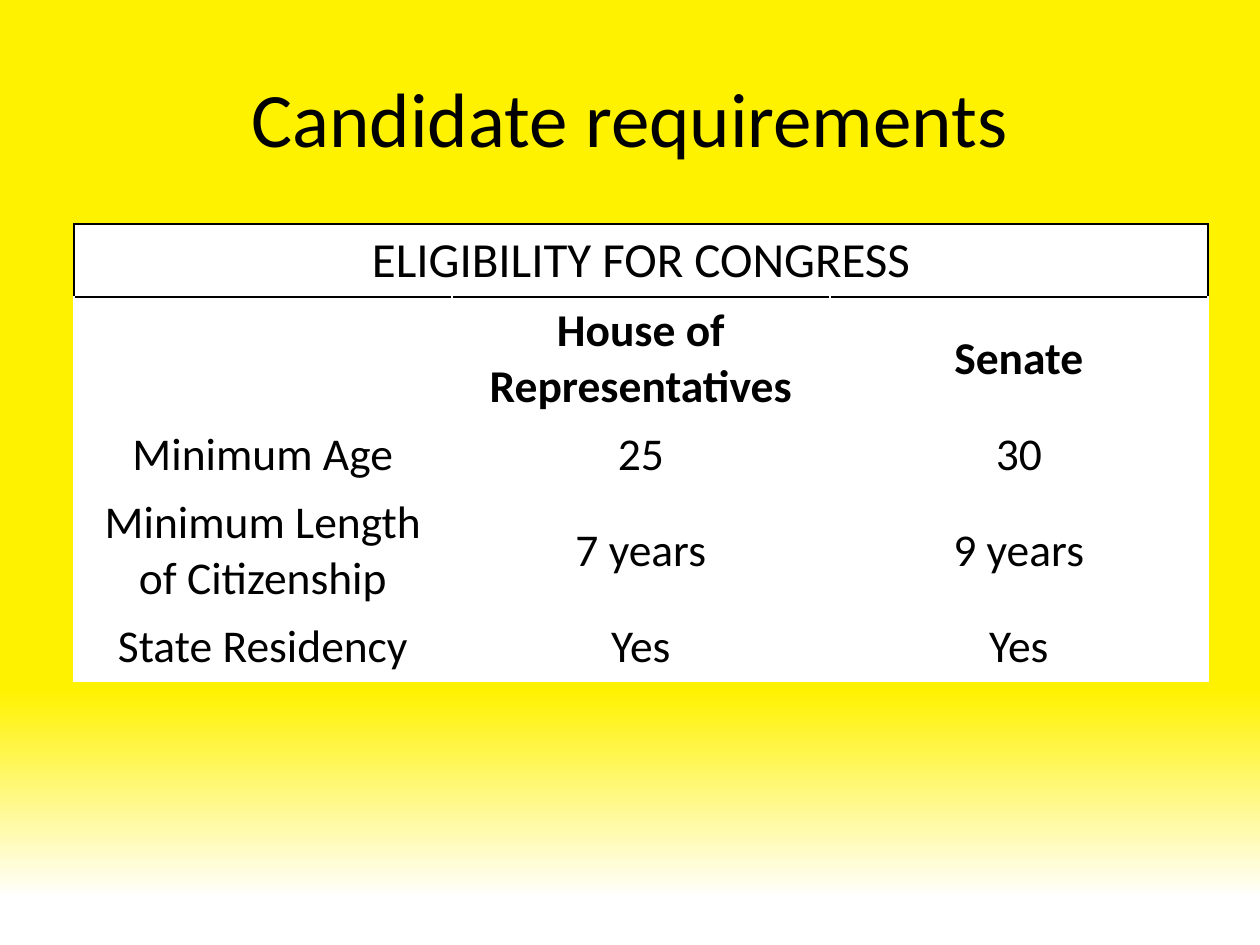
"""Build the slide on candidate requirements for Congress."""
from lxml.etree import SubElement
from pptx import Presentation
from pptx.dml.color import RGBColor
from pptx.enum.text import MSO_ANCHOR as Anchor, PP_ALIGN as Align
from pptx.oxml.ns import qn
from pptx.util import Pt

SCALE = 914400 // 126
COLORS = {"yellow": "FFF200", "white": "FFFFFF", "black": "000000"}
FONT = "Calibri"
TITLE = "Candidate requirements"
TITLE_BOX = (63, 38, 1134, 157)
BACKGROUND_STOPS = [(0.73, "yellow"), (0.95, "white")]
ROWS = [
    ("ELIGIBILITY FOR CONGRESS", "", ""),
    ("", "House of Representatives", "Senate"),
    ("Minimum Age", "25", "30"),
    ("Minimum Length of Citizenship", "7 years", "9 years"),
    ("State Residency", "Yes", "Yes"),
]
ROW_HEIGHTS = [73, 124, 68, 124, 68]
COLUMN_WIDTH = 378
TABLE_LEFT, TABLE_TOP = 74, 224
BORDERS = {0: "LRTB", 1: "T"}


def px(length):
    return length * SCALE


def color(name):
    return RGBColor.from_string(COLORS[name])


def write(text_frame, text, size, bold=False):
    text_frame.text = text
    paragraph = text_frame.paragraphs[0]
    paragraph.alignment = Align.CENTER
    paragraph.font.size = Pt(size)
    for run in paragraph.runs:
        run.font.name = FONT
        run.font.size = Pt(size)
        run.font.bold = bold
        run.font.color.rgb = color("black")


def add_borders(cell, sides):
    properties = cell._tc.get_or_add_tcPr()
    for index, side in enumerate(sides):
        line = SubElement(properties, qn(f"a:ln{side}"), w=str(Pt(1)))
        fill = SubElement(line, qn("a:solidFill"))
        SubElement(fill, qn("a:srgbClr"), val=COLORS["black"])
        properties.insert(index, line)


def paint_background(slide):
    fill = slide.background.fill
    fill.gradient()
    fill.gradient_angle = 270
    for stop, (position, name) in zip(fill.gradient_stops, BACKGROUND_STOPS):
        stop.position = position
        stop.color.rgb = color(name)


def add_title(slide):
    text_frame = slide.shapes.add_textbox(*map(px, TITLE_BOX)).text_frame
    text_frame.word_wrap = True
    text_frame.vertical_anchor = Anchor.MIDDLE
    write(text_frame, TITLE, 44)


def add_requirements(slide):
    columns = len(ROWS[0])
    box = (TABLE_LEFT, TABLE_TOP, columns * COLUMN_WIDTH, sum(ROW_HEIGHTS))
    table = slide.shapes.add_table(len(ROWS), columns, *map(px, box)).table
    table.first_row = table.horz_banding = False
    for column in table.columns:
        column.width = px(COLUMN_WIDTH)
    for r, (texts, height) in enumerate(zip(ROWS, ROW_HEIGHTS)):
        table.rows[r].height = px(height)
        for c, text in enumerate(texts):
            cell = table.cell(r, c)
            cell.vertical_anchor = Anchor.MIDDLE
            cell.fill.solid()
            cell.fill.fore_color.rgb = color("white")
            write(cell.text_frame, text, 28 if r == 0 else 26, bold=r == 1)
            add_borders(cell, BORDERS.get(r, ""))
    table.cell(0, 0).merge(table.cell(0, columns - 1))


def main():
    presentation = Presentation()
    presentation.slide_width, presentation.slide_height = px(1260), px(945)
    slide = presentation.slides.add_slide(presentation.slide_layouts[6])
    paint_background(slide)
    add_title(slide)
    add_requirements(slide)
    presentation.save("out.pptx")


if __name__ == "__main__":
    main()
